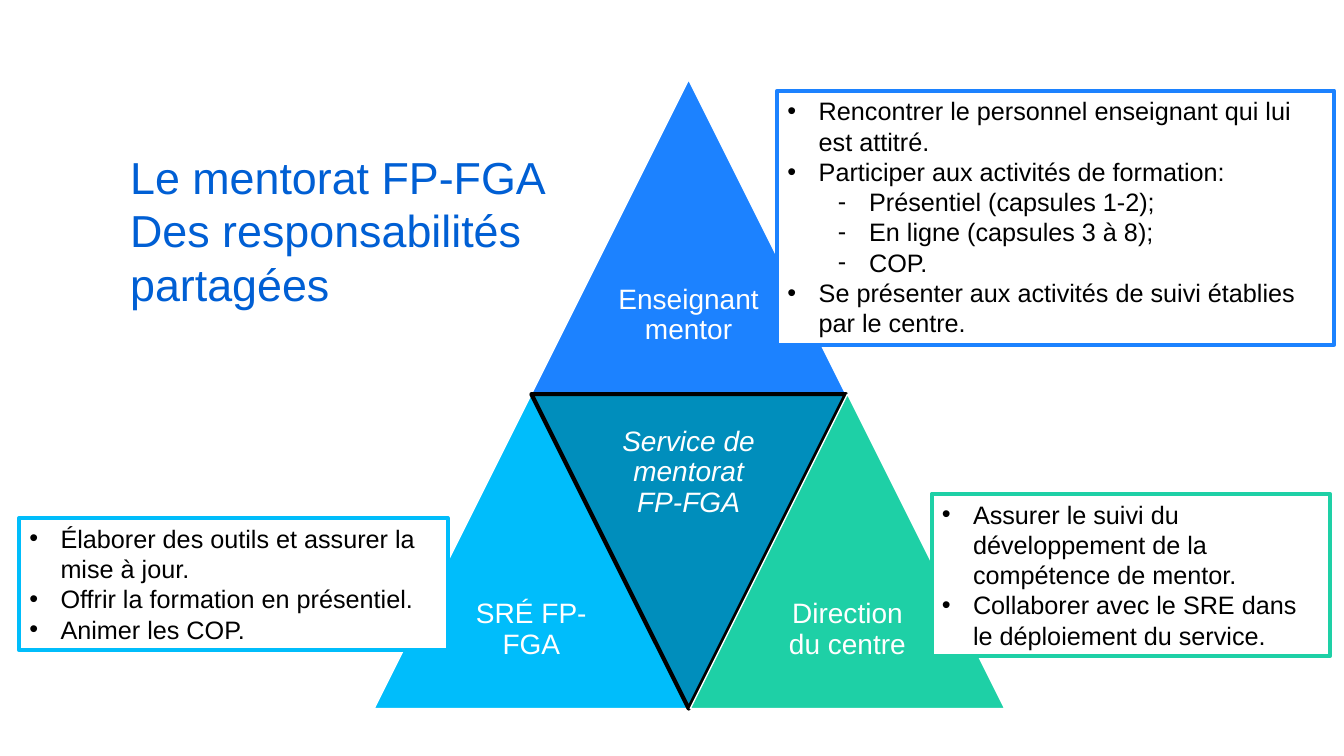
"""Build the slide on shared duties in the mentoring service."""
from dataclasses import dataclass

from lxml.etree import SubElement
from pptx import Presentation
from pptx.dml.color import RGBColor
from pptx.enum.shapes import MSO_SHAPE
from pptx.enum.text import MSO_ANCHOR, MSO_AUTO_SIZE, PP_ALIGN
from pptx.oxml.ns import qn
from pptx.util import Inches, Pt

WIDE, HIGH = Inches(13.33), Inches(7.5)
LEFT, TOP, CELL = Inches(3.71), Inches(0.79), Inches(1.56)
FONT = "Arial"
BLUE = RGBColor(0x1C, 0x82, 0xFF)
CYAN = RGBColor(0x00, 0xBD, 0xFB)
TEAL = RGBColor(0x00, 0x8E, 0xBC)
GREEN = RGBColor(0x1E, 0xD0, 0xA6)
NAVY = RGBColor(0x00, 0x5F, 0xD4)
WHITE = RGBColor(0xFF, 0xFF, 0xFF)
BLACK = RGBColor(0x00, 0x00, 0x00)


@dataclass
class Part:
    """A triangle of the pyramid, placed in grid cells."""
    col: float
    row: float
    text: str
    fill: RGBColor
    core: bool = False


@dataclass
class Duty:
    """A framed list, placed in percent of the slide."""
    slot: int
    area: tuple[float, float, float, float]
    color: RGBColor
    items: list[tuple[int, str]]


PARTS = [
    Part(1, 0, "Enseignant mentor", BLUE),
    Part(0, 2, "SRÉ FP-FGA", CYAN),
    Part(1, 2, "Service de mentorat FP-FGA", TEAL, core=True),
    Part(2.01, 2, "Direction du centre", GREEN),
]
DUTIES = [
    Duty(2, (57.84, 12, 41.41, 33.6), BLUE, [
        (0, "Rencontrer le personnel enseignant qui lui est attitré."),
        (0, "Participer aux activités de formation:"),
        (1, "Présentiel (capsules 1-2);"),
        (1, "En ligne (capsules 3 à 8);"),
        (1, "COP."),
        (0, "Se présenter aux activités de suivi établies par le centre."),
    ]),
    Duty(4, (69.32, 65.33, 29.63, 21.47), GREEN, [
        (0, "Assurer le suivi du développement de la compétence de mentor."),
        (0, "Collaborer avec le SRE dans le déploiement du service."),
    ]),
    Duty(3, (1.43, 68.53, 31.88, 17.47), CYAN, [
        (0, "Élaborer des outils et assurer la mise à jour."),
        (0, "Offrir la formation en présentiel."),
        (0, "Animer les COP."),
    ]),
]


def style(para, size: float, color: RGBColor, align=PP_ALIGN.LEFT) -> None:
    """Set the font and alignment of a paragraph."""
    para.alignment = align
    para.font.name, para.font.size = FONT, Pt(size)
    para.font.color.rgb = color
    para.font.bold = False


def paint(shape, fill: RGBColor, line: RGBColor, width: float) -> None:
    """Set the fill and outline of a shape."""
    shape.fill.solid()
    shape.fill.fore_color.rgb = fill
    shape.line.color.rgb = line
    shape.line.width = Pt(width)


def place(slide, shape, area: tuple[float, float, float, float]) -> None:
    """Move a placeholder to an area and to the front."""
    x, y, w, h = area
    shape.left, shape.top = int(WIDE * x / 100), int(HIGH * y / 100)
    shape.width, shape.height = int(WIDE * w / 100), int(HIGH * h / 100)
    frame = shape.text_frame
    frame.auto_size, frame.word_wrap = MSO_AUTO_SIZE.NONE, True
    frame.vertical_anchor = MSO_ANCHOR.TOP
    slide.shapes._spTree.append(shape._element)


def draw_part(slide, part: Part) -> None:
    """Draw one triangle and its label."""
    x, y = int(LEFT + part.col * CELL), int(TOP + part.row * CELL)
    shape = slide.shapes.add_shape(
        MSO_SHAPE.ISOSCELES_TRIANGLE, x, y, 2 * CELL, 2 * CELL)
    shape.shadow.inherit = False
    shape.rotation = 180 if part.core else 0
    paint(shape, part.fill, *((BLACK, 3) if part.core else (WHITE, 1)))
    drop = 0 if part.core else CELL
    label = slide.shapes.add_textbox(x + CELL // 2, y + drop, CELL, CELL)
    frame = label.text_frame
    frame.word_wrap, frame.vertical_anchor = True, MSO_ANCHOR.MIDDLE
    frame.margin_left = frame.margin_right = Inches(0.08)
    frame.margin_top = frame.margin_bottom = Inches(0.08)
    para = frame.paragraphs[0]
    para.text, para.line_spacing = part.text, 0.9
    style(para, 20, WHITE, PP_ALIGN.CENTER)
    para.font.italic = part.core


def draw_duty(slide, duty: Duty) -> None:
    """Fill one body placeholder with a framed list."""
    shape = slide.placeholders[duty.slot]
    place(slide, shape, duty.area)
    paint(shape, WHITE, duty.color, 3)
    frame = shape.text_frame
    frame.text = "\n".join(text for _, text in duty.items)
    for para, (level, _) in zip(frame.paragraphs, duty.items):
        para.level, para.space_before = level, Pt(0)
        props = para._p.get_or_add_pPr()
        props.set("marL", str(Inches(0.31 + 0.5 * level)))
        props.set("indent", str(-Inches(0.31)))
        SubElement(props, qn("a:buFont"), typeface=FONT)
        SubElement(props, qn("a:buChar"), char="•-"[level])
        style(para, 18, BLACK)


def main() -> None:
    """Build and save the slide."""
    deck = Presentation()
    deck.slide_width, deck.slide_height = WIDE, HIGH
    slide = deck.slides.add_slide(deck.slide_layouts[4])
    spare = slide.placeholders[1]._element
    spare.getparent().remove(spare)
    for part in PARTS:
        draw_part(slide, part)
    for duty in DUTIES:
        draw_duty(slide, duty)
    title = slide.shapes.title
    place(slide, title, (8.93, 19.07, 39.08, 22.93))
    title.text_frame.text = "Le mentorat FP-FGA\nDes responsabilités partagées"
    for para in title.text_frame.paragraphs:
        style(para, 32, NAVY)
    deck.save("out.pptx")


if __name__ == "__main__":
    main()
